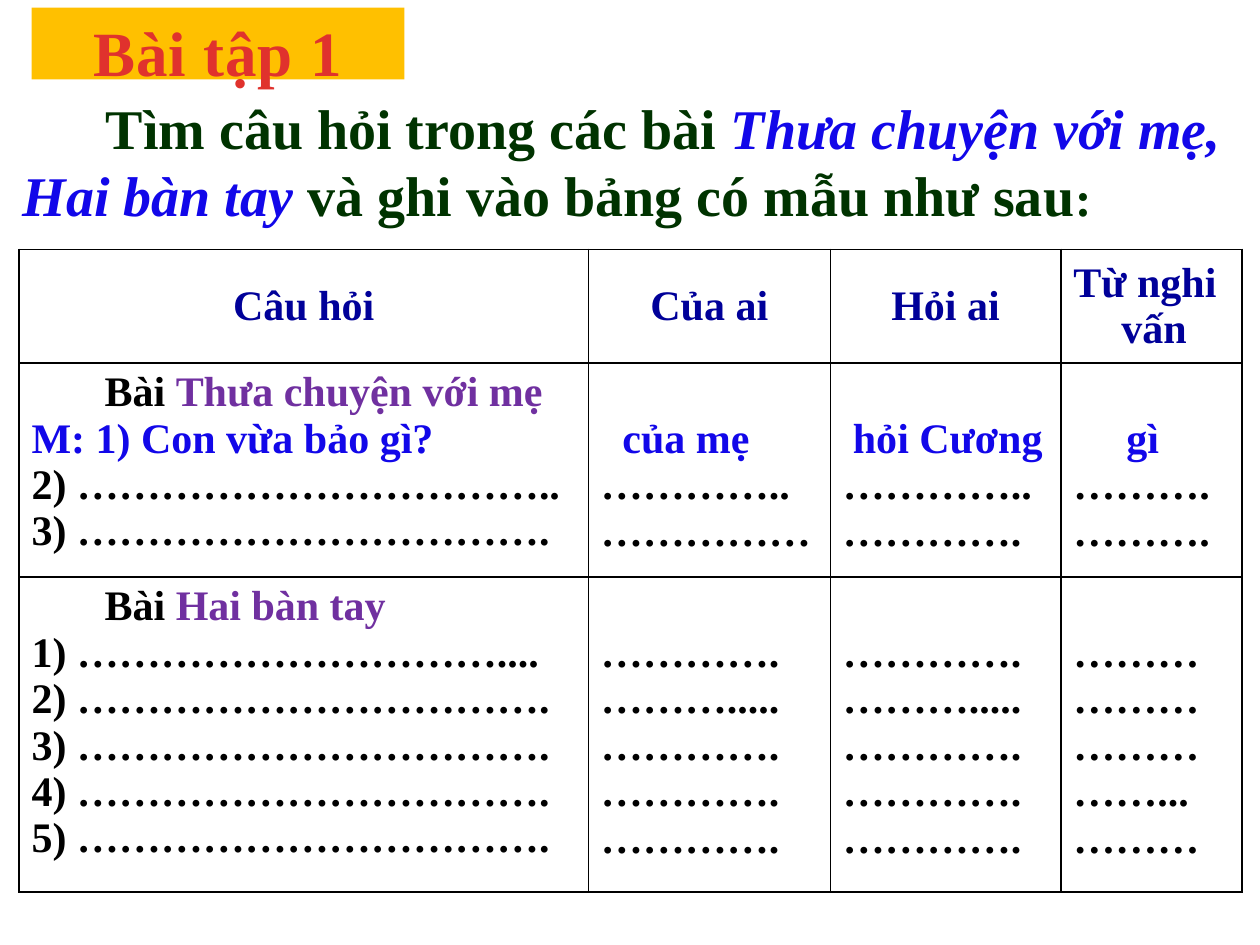
"""Build the exercise slide: a title, an instruction and a table to fill in."""
from dataclasses import dataclass

from lxml import etree
from pptx import Presentation
from pptx.dml.color import RGBColor
from pptx.enum import text as t
from pptx.oxml import ns
from pptx.util import Inches, Pt


@dataclass(frozen=True)
class Theme:
    """Font, colours and type sizes of the slide."""
    font: str = "Times New Roman"
    banner: str = "FFC000"
    title: str = "E0322D"
    task: str = "003300"
    sample: str = "1207E9"
    header: str = "000099"
    lesson: str = "7030A0"
    ink: str = "000000"
    title_size: int = 36
    task_size: int = 32
    colon_size: int = 28
    table_size: int = 24


THEME = Theme()


@dataclass(frozen=True)
class Span:
    """Text in one colour."""
    words: str
    color: str = THEME.ink
    italic: bool = False
    size: int | None = None


@dataclass(frozen=True)
class Line:
    """A paragraph with its left margin and first-line indent in inches."""
    spans: tuple[Span, ...]
    margin: float = 0.38
    indent: float = -0.38
    align: t.PP_ALIGN = t.PP_ALIGN.LEFT


@dataclass(frozen=True)
class Entry:
    """The lines of a table cell and its top margin in inches."""
    lines: tuple[Line, ...]
    top: float = 0.05
    anchor: t.MSO_ANCHOR = t.MSO_ANCHOR.TOP


def write_line(paragraph, line: Line, size: int) -> None:
    """Fill a paragraph with the spans of a line."""
    paragraph.alignment = line.align
    paragraph.space_before = Pt(0)
    font = paragraph.font
    font.name, font.size, font.bold = THEME.font, Pt(size), True
    props = paragraph._p.get_or_add_pPr()
    props.set("marL", str(Inches(line.margin)))
    props.set("indent", str(Inches(line.indent)))
    props.insert_element_before(etree.Element(ns.qn("a:buNone")), "a:tabLst", "a:defRPr", "a:extLst")
    for span in line.spans:
        run = paragraph.add_run()
        run.text = span.words
        run.font.name, run.font.bold = THEME.font, True
        run.font.size = Pt(span.size or size)
        run.font.italic = span.italic
        run.font.color.rgb = RGBColor.from_string(span.color)


def write_lines(frame, lines: tuple[Line, ...], size: int) -> None:
    """Write lines into a text frame, one paragraph each."""
    for index, line in enumerate(lines):
        paragraph = frame.add_paragraph() if index else frame.paragraphs[0]
        write_line(paragraph, line, size)


def place(shape, left: float, top: float, width: float, height: float) -> None:
    """Move a placeholder and pin its text to the top."""
    shape.left, shape.top = Inches(left), Inches(top)
    shape.width, shape.height = Inches(width), Inches(height)
    shape.text_frame.auto_size = t.MSO_AUTO_SIZE.NONE
    shape.text_frame.vertical_anchor = t.MSO_ANCHOR.TOP


def draw_borders(cell) -> None:
    """Give a cell thin lines on all four sides."""
    props = cell._tc.get_or_add_tcPr()
    for index, side in enumerate(("lnL", "lnR", "lnT", "lnB")):
        border = etree.Element(ns.qn(f"a:{side}"), w=str(Pt(1)))
        fill = etree.SubElement(border, ns.qn("a:solidFill"))
        etree.SubElement(fill, ns.qn("a:srgbClr"), val=THEME.ink)
        props.insert(index, border)


def write_entry(cell, entry: Entry) -> None:
    """Format a table cell and write its entry."""
    cell.fill.background()
    cell.margin_top = Inches(entry.top)
    cell.vertical_anchor = entry.anchor
    write_lines(cell.text_frame, entry.lines, THEME.table_size)
    draw_borders(cell)


def heading(words: str, align: t.PP_ALIGN = t.PP_ALIGN.CENTER) -> Entry:
    """Return a column heading."""
    line = Line((Span(words, THEME.header),), align=align)
    return Entry((line,), anchor=t.MSO_ANCHOR.MIDDLE)


def lesson(name: str) -> Line:
    """Return the line that names a lesson."""
    return Line((Span("Bài "), Span(name, THEME.lesson)), margin=0.58, indent=0)


def sample(words: str, margin: float = 0) -> Line:
    """Return a line of the worked example."""
    return Line((Span(words, THEME.sample),), margin=margin, indent=0)


def blanks(*dots: str) -> tuple[Line, ...]:
    """Return dotted lines to fill in."""
    return tuple(Line((Span(words),)) for words in dots)


def numbered(start: int, *dots: str) -> tuple[Line, ...]:
    """Return numbered dotted lines."""
    return blanks(*(f"{number}) {words}" for number, words in enumerate(dots, start)))


BELOW_LESSON = 0.42
LONG = "……………………………."
SHORT = "…………."
ANSWERS = Entry(blanks(SHORT, "……….....", SHORT, SHORT, SHORT), BELOW_LESSON)
COLUMNS = (4.52, 1.92, 1.83, 1.44)
ROWS = (0.9, 1.7, 2.5)
ENTRIES = (
    (heading("Câu hỏi"), heading("Của ai"), heading("Hỏi ai"),
     heading("Từ nghi vấn", t.PP_ALIGN.LEFT)),
    (Entry((lesson("Thưa chuyện với mẹ"), sample("M: 1) Con vừa bảo gì?"),
            *numbered(2, "……………………………..", LONG))),
     Entry((sample("của mẹ", 0.17), *blanks("…………..", "……………")), BELOW_LESSON),
     Entry((sample("hỏi Cương", 0.08), *blanks("…………..", SHORT)), BELOW_LESSON),
     Entry((sample("gì", 0.42), *blanks("……….", "……….")), BELOW_LESSON)),
    (Entry((lesson("Hai bàn tay"),
            *numbered(1, "…………………………....", LONG, LONG, LONG, LONG))),
     ANSWERS, ANSWERS,
     Entry(blanks("………", "………", "………", "……...", "………"), BELOW_LESSON)),
)
TITLE = Line((Span("Bài tập 1", THEME.title),), 0, 0, t.PP_ALIGN.CENTER)
TASK = Line((
    Span("Tìm câu hỏi trong các bài ", THEME.task),
    Span("Thưa chuyện với mẹ, Hai bàn tay ", THEME.sample, italic=True),
    Span("và ghi vào bảng có mẫu như sau", THEME.task),
    Span(":", THEME.task, size=THEME.colon_size),
), margin=0, indent=0.66)


def main() -> None:
    """Build and save the slide."""
    deck = Presentation()
    deck.slide_width, deck.slide_height = Inches(10), Inches(7.5)
    slide = deck.slides.add_slide(deck.slide_layouts[1])

    title, task = slide.shapes.title, slide.placeholders[1]
    place(title, 0.25, 0.06, 2.96, 0.57)
    title.fill.solid()
    title.fill.fore_color.rgb = RGBColor.from_string(THEME.banner)
    title.text_frame.word_wrap = False
    write_lines(title.text_frame, (TITLE,), THEME.title_size)
    title.text_frame.paragraphs[0].runs[0].font._element.set("spc", "50")

    place(task, 0.08, 0.69, 9.78, 1.18)
    write_lines(task.text_frame, (TASK,), THEME.task_size)
    task.text_frame.paragraphs[0].line_spacing = Pt(38.5)

    questions = slide.shapes.add_table(
        len(ROWS), len(COLUMNS), Inches(0.15), Inches(1.98),
        Inches(sum(COLUMNS)), Inches(sum(ROWS))).table
    questions.first_row = questions.horz_banding = False
    for column, width in zip(questions.columns, COLUMNS):
        column.width = Inches(width)
    for row, height, entries in zip(questions.rows, ROWS, ENTRIES):
        row.height = Inches(height)
        for cell, entry in zip(row.cells, entries):
            write_entry(cell, entry)

    deck.save("out.pptx")


if __name__ == "__main__":
    main()
